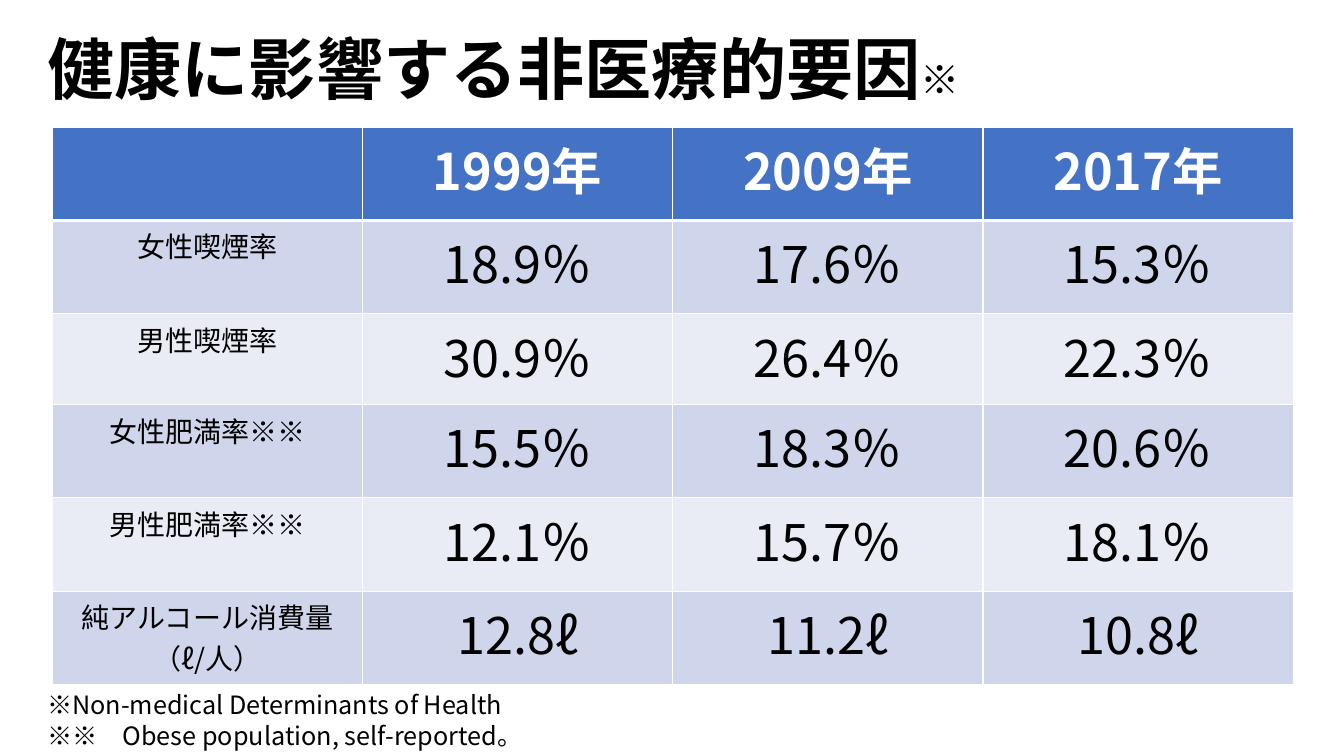
import pptx
import pptx.dml.color
import pptx.enum.text
import pptx.oxml.ns
import pptx.util
from lxml import etree

FONT = "Noto Sans CJK JP"
BLACK, WHITE = "000000", "FFFFFF"
HEADER_FILL = "4472C4"
BAND_FILLS = ["CFD5EA", "E9EBF5"]

YEARS = ["", "1999年", "2009年", "2017年"]
INDICATORS = [
    ["女性喫煙率", "18.9％", "17.6％", "15.3％"],
    ["男性喫煙率", "30.9％", "26.4％", "22.3％"],
    ["女性肥満率※※", "15.5％", "18.3％", "20.6％"],
    ["男性肥満率※※", "12.1％", "15.7％", "18.1％"],
    ["純アルコール消費量\n（ℓ/人）", "12.8ℓ", "11.2ℓ", "10.8ℓ"],
]
ROW_HEIGHTS = [66.7, 66.7, 64.8, 66.7, 66.7, 66.7]
COLUMN_WIDTH = 221.6


def points(*lengths):
    return [pptx.util.Pt(length) for length in lengths]


def color(value):
    return pptx.dml.color.RGBColor.from_string(value)


def add_xml(parent, tag, **attributes):
    return etree.SubElement(parent, pptx.oxml.ns.qn(tag), **attributes)


class SlideBuilder:
    def __init__(self, slide, font):
        self.slide = slide
        self.font = font

    def add_run(self, paragraph, text, size, ink=BLACK, bold=False):
        run = paragraph.add_run()
        run.text = text
        run.font.name = self.font
        run.font.size = pptx.util.Pt(size)
        run.font.bold = bold
        run.font.color.rgb = color(ink)
        add_xml(run.font._element, "a:ea", typeface=self.font)

    def add_title(self, box, runs):
        title = self.slide.shapes.title
        title.left, title.top, title.width, title.height = points(*box)
        title.text_frame.vertical_anchor = pptx.enum.text.MSO_ANCHOR.MIDDLE
        paragraph = title.text_frame.paragraphs[0]
        paragraph.alignment = pptx.enum.text.PP_ALIGN.LEFT
        paragraph.line_spacing = 0.9
        for text, size in runs:
            self.add_run(paragraph, text, size, bold=True)

    def add_note(self, box, text, wrap):
        frame = self.slide.shapes.add_textbox(*points(*box)).text_frame
        frame.word_wrap = wrap
        frame.auto_size = pptx.enum.text.MSO_AUTO_SIZE.SHAPE_TO_FIT_TEXT
        self.add_run(frame.paragraphs[0], text, 18)

    def add_borders(self, cell, top, bottom):
        properties = cell._tc.get_or_add_tcPr()
        for side, width in {"L": 1, "R": 1, "T": top, "B": bottom}.items():
            line = add_xml(properties, f"a:ln{side}", w=str(pptx.util.Pt(width)))
            add_xml(add_xml(line, "a:solidFill"), "a:srgbClr", val=WHITE)

    def fill_cell(self, cell, text, size, ink, bold, fill):
        cell.fill.solid()
        cell.fill.fore_color.rgb = color(fill)
        for index, line in enumerate(text.split("\n")):
            frame = cell.text_frame
            paragraph = frame.add_paragraph() if index else frame.paragraphs[0]
            paragraph.alignment = pptx.enum.text.PP_ALIGN.CENTER
            if line:
                self.add_run(paragraph, line, size, ink, bold)

    def add_table(self, left, top, rows):
        columns = len(rows[0])
        box = points(left, top, COLUMN_WIDTH * columns, sum(ROW_HEIGHTS))
        table = self.slide.shapes.add_table(len(rows), columns, *box).table
        for column in table.columns:
            column.width = pptx.util.Pt(COLUMN_WIDTH)
        for row_index, texts in enumerate(rows):
            table.rows[row_index].height = pptx.util.Pt(ROW_HEIGHTS[row_index])
            header = row_index == 0
            fill = HEADER_FILL if header else BAND_FILLS[(row_index - 1) % 2]
            for column_index, text in enumerate(texts):
                cell = table.cell(row_index, column_index)
                size = 36 if header or column_index else 20
                self.add_borders(cell, 3 if row_index == 1 else 1, 3 if header else 1)
                self.fill_cell(cell, text, size, WHITE if header else BLACK, header, fill)


def main():
    presentation = pptx.Presentation()
    presentation.slide_width, presentation.slide_height = points(960, 540)
    slide = presentation.slides.add_slide(presentation.slide_layouts[5])
    builder = SlideBuilder(slide, FONT)
    builder.add_title((26.6, 0, 843, 104.4), [("健康に影響する非医療的要因", 48), ("※", 28)])
    builder.add_table(37.4, 90.7, [YEARS] + INDICATORS)
    builder.add_note((26.6, 488.9, 342, 29), "※Non-medical Determinants of Health", False)
    builder.add_note((26.6, 511.2, 525.6, 29), "※※　Obese population, self-reported。", True)
    presentation.save("out.pptx")


if __name__ == "__main__":
    main()
